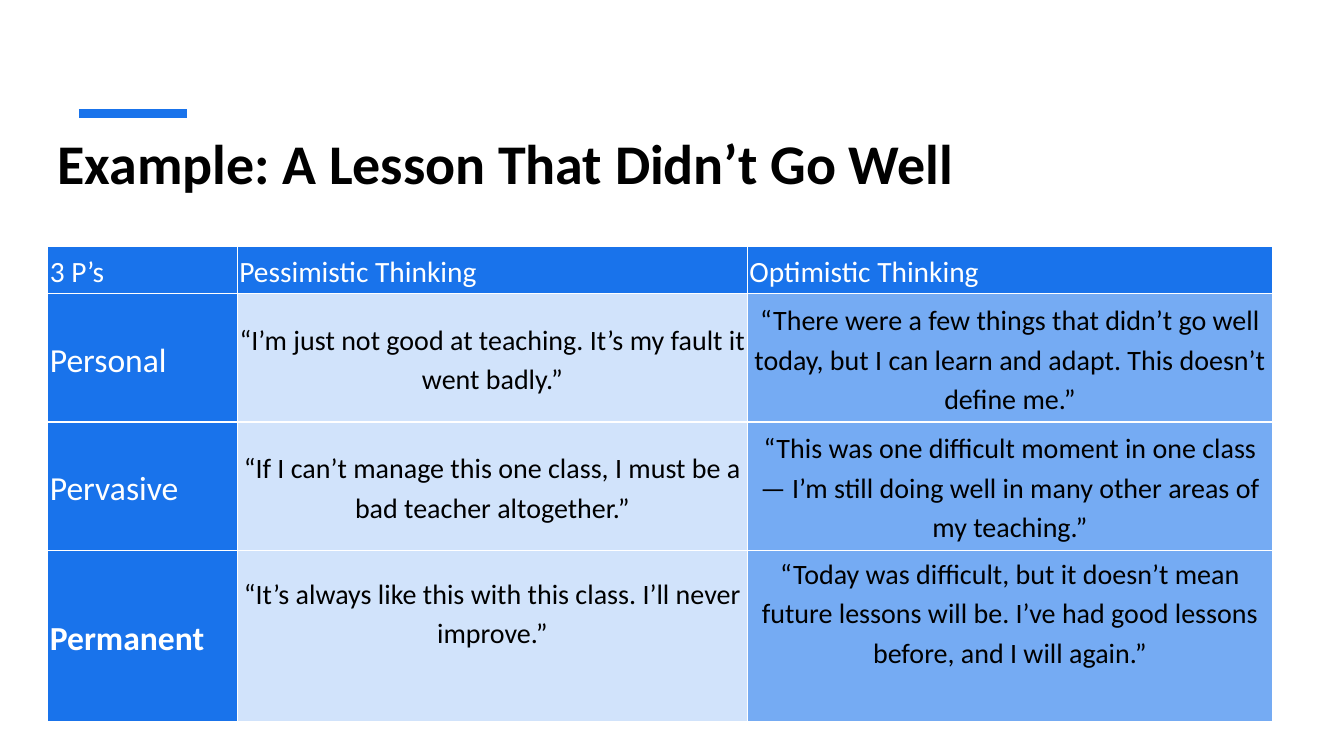
"""Build a slide that contrasts pessimistic and optimistic thinking in a table."""
from dataclasses import dataclass

from lxml.etree import SubElement
from pptx import Presentation
from pptx.dml.color import RGBColor
from pptx.enum.shapes import MSO_CONNECTOR
from pptx.enum.text import MSO_ANCHOR, PP_ALIGN
from pptx.oxml.ns import qn
from pptx.slide import Slide
from pptx.table import _Cell
from pptx.text.text import TextFrame
from pptx.util import Pt

BLUE = RGBColor(0x19, 0x73, 0xEB)
PALE_BLUE = RGBColor(0xD1, 0xE3, 0xFB)
MID_BLUE = RGBColor(0x75, 0xAB, 0xF3)
WHITE = RGBColor(0xFF, 0xFF, 0xFF)
BLACK = RGBColor(0x00, 0x00, 0x00)

FONT = "Calibri"
COLUMN_WIDTHS = (135.4, 364.3, 375.1)
COLUMN_FILLS = (BLUE, PALE_BLUE, MID_BLUE)
CELL_MARGIN = 1.4
HEADERS = ("3 P’s", "Pessimistic Thinking", "Optimistic Thinking")
HEADER_HEIGHT = 34.2


@dataclass(frozen=True)
class Mindset:
    """One of the three P's with its two ways of thinking."""

    name: str
    pessimistic: str
    optimistic: str
    height: float = 91.6
    bold: bool = False
    space_below: float = CELL_MARGIN


MINDSETS = (
    Mindset(
        "Personal",
        "“I’m just not good at teaching. It’s my fault it went badly.”",
        "“There were a few things that didn’t go well today, but I can learn and adapt. "
        "This doesn’t define me.”",
    ),
    Mindset(
        "Pervasive",
        "“If I can’t manage this one class, I must be a bad teacher altogether.”",
        "“This was one difficult moment in one class — I’m still doing well in many "
        "other areas of my teaching.”",
    ),
    Mindset(
        "Permanent",
        "“It’s always like this with this class. I’ll never improve.”",
        "“Today was difficult, but it doesn’t mean future lessons will be. "
        "I’ve had good lessons before, and I will again.”",
        height=122.4,
        bold=True,
        space_below=36,
    ),
)


def write_text(
    text_frame: TextFrame,
    text: str,
    *,
    size: float,
    color: RGBColor,
    bold: bool = False,
    alignment: PP_ALIGN = PP_ALIGN.LEFT,
    line_spacing: float = 1.0,
    space_after: float = 0,
) -> None:
    """Write one formatted paragraph into a text frame."""
    paragraph = text_frame.paragraphs[0]
    paragraph.alignment = alignment
    paragraph.line_spacing = line_spacing
    paragraph.space_after = Pt(space_after)
    run = paragraph.add_run()
    run.text = text
    run.font.name = FONT
    run.font.size = Pt(size)
    run.font.bold = bold
    run.font.color.rgb = color


def add_borders(cell: _Cell, color: RGBColor, width: float) -> None:
    """Draw a solid border on all four sides of a cell."""
    properties = cell._tc.get_or_add_tcPr()
    for side in ("a:lnL", "a:lnR", "a:lnT", "a:lnB"):
        line = SubElement(properties, qn(side), w=str(Pt(width)))
        fill = SubElement(line, qn("a:solidFill"))
        SubElement(fill, qn("a:srgbClr"), val=str(color))


def fill_cell(
    cell: _Cell,
    text: str,
    *,
    fill: RGBColor,
    size: float,
    color: RGBColor,
    bold: bool = False,
    alignment: PP_ALIGN = PP_ALIGN.LEFT,
    space_below: float = CELL_MARGIN,
) -> None:
    """Give a cell its borders, fill, margins and text."""
    add_borders(cell, WHITE, 1)
    cell.fill.solid()
    cell.fill.fore_color.rgb = fill
    cell.vertical_anchor = MSO_ANCHOR.MIDDLE
    cell.margin_left = cell.margin_right = cell.margin_top = Pt(CELL_MARGIN)
    cell.margin_bottom = Pt(space_below)
    write_text(
        cell.text_frame, text, size=size, color=color, bold=bold,
        alignment=alignment, line_spacing=1.15, space_after=8,
    )


def add_accent_line(slide: Slide) -> None:
    """Draw the short thick line above the title."""
    connector = slide.shapes.add_connector(
        MSO_CONNECTOR.STRAIGHT, Pt(56.4), Pt(81.2), Pt(133.4), Pt(81.2)
    )
    connector.line.color.rgb = BLUE
    connector.line.width = Pt(6)
    SubElement(connector._element.spPr, qn("a:effectLst"))


def add_title(slide: Slide, text: str) -> None:
    """Add the slide title."""
    shape = slide.shapes.add_textbox(Pt(34), Pt(63.4), Pt(828), Pt(104.4))
    shape.text_frame.word_wrap = True
    shape.text_frame.vertical_anchor = MSO_ANCHOR.MIDDLE
    write_text(shape.text_frame, text, size=40, color=BLACK, bold=True)


def add_mindset_table(slide: Slide) -> None:
    """Add the table with a header row and one row for each mindset."""
    heights = (HEADER_HEIGHT, *(mindset.height for mindset in MINDSETS))
    table = slide.shapes.add_table(
        len(heights), len(COLUMN_WIDTHS),
        Pt(34.2), Pt(175.7), Pt(sum(COLUMN_WIDTHS)), Pt(sum(heights)),
    ).table
    for column, width in zip(table.columns, COLUMN_WIDTHS):
        column.width = Pt(width)
    for row, height in zip(table.rows, heights):
        row.height = Pt(height)

    for column_index, header in enumerate(HEADERS):
        fill_cell(table.cell(0, column_index), header, fill=BLUE, size=21, color=WHITE)
    for row_index, mindset in enumerate(MINDSETS, start=1):
        fill_cell(
            table.cell(row_index, 0), mindset.name,
            fill=COLUMN_FILLS[0], size=24, color=WHITE, bold=mindset.bold,
        )
        thoughts = (mindset.pessimistic, mindset.optimistic)
        for column_index, thought in enumerate(thoughts, start=1):
            fill_cell(
                table.cell(row_index, column_index), thought,
                fill=COLUMN_FILLS[column_index], size=20, color=BLACK,
                alignment=PP_ALIGN.CENTER, space_below=mindset.space_below,
            )


def main() -> None:
    """Build and save the presentation."""
    presentation = Presentation()
    presentation.slide_width = Pt(960)
    presentation.slide_height = Pt(540)
    slide = presentation.slides.add_slide(presentation.slide_layouts[6])
    add_accent_line(slide)
    add_title(slide, "Example: A Lesson That Didn’t Go Well")
    add_mindset_table(slide)
    presentation.save("out.pptx")


if __name__ == "__main__":
    main()
